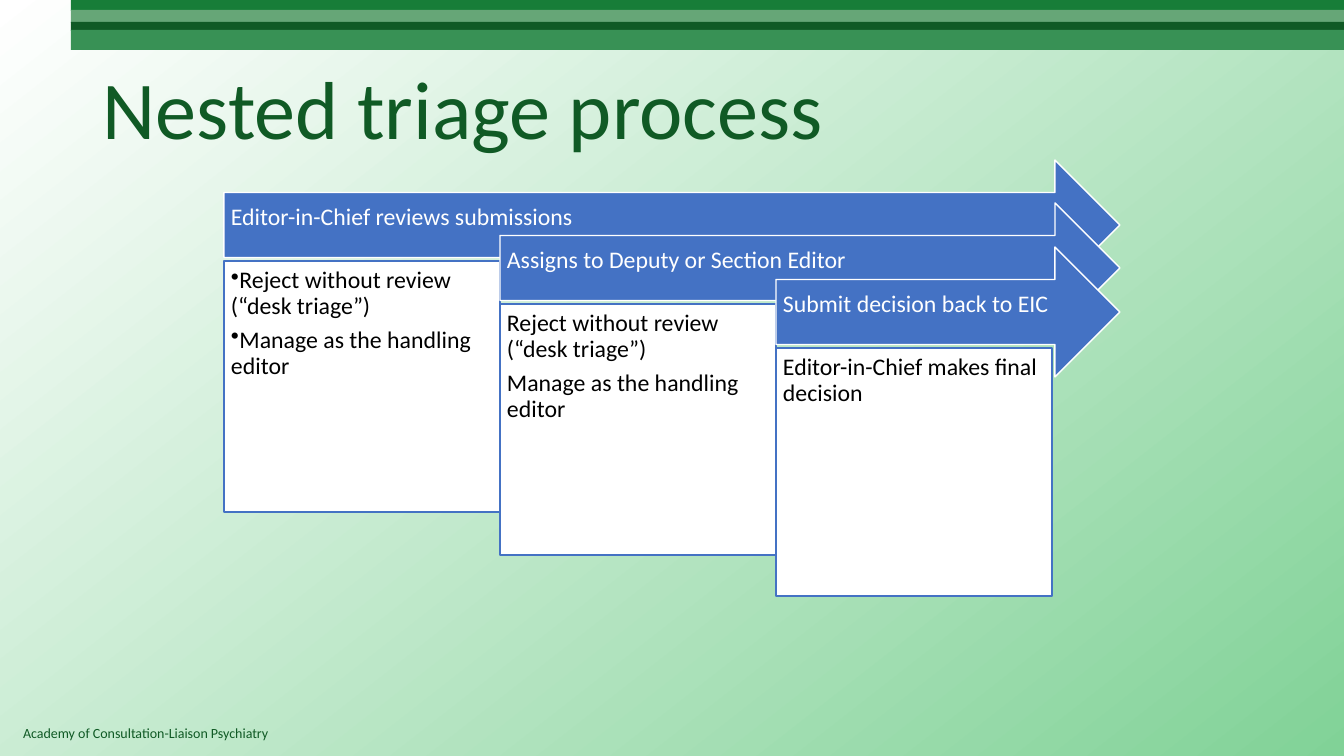
import pptx
import pptx.util
import pptx.dml.color
import pptx.enum.shapes
import pptx.enum.text
import lxml.etree

SCALE = 914400 / 100.8
HUES = {"white": "FFFFFF", "mint": "81D297", "leaf": "177D38", "sage": "66A677",
        "pine": "105A25", "fern": "389155", "blue": "4472C4", "black": "000000"}
KINDS = pptx.enum.shapes.MSO_SHAPE
ANCHOR = pptx.enum.text.MSO_ANCHOR
ALIGN = pptx.enum.text.PP_ALIGN


def add_block(kind, area, fill, line=None):
    block = slide.shapes.add_shape(kind, *[round(n * SCALE) for n in area])
    block.shadow.inherit = False
    block.fill.solid()
    block.fill.fore_color.rgb = pptx.dml.color.RGBColor.from_string(HUES[fill])
    if line:
        block.line.color.rgb = pptx.dml.color.RGBColor.from_string(HUES[line])
        block.line.width = pptx.util.Pt(1)
    else:
        block.line.fill.background()
    return block


def write(shape, lines, size, hue, anchor, pads, bullet=False):
    """Fill a shape with left-aligned lines; pads are left, top, right, bottom in px."""
    frame = shape.text_frame
    frame.text = "\n".join(lines)
    frame.word_wrap = True
    frame.auto_size = pptx.enum.text.MSO_AUTO_SIZE.NONE
    frame.vertical_anchor = anchor
    (frame.margin_left, frame.margin_top,
     frame.margin_right, frame.margin_bottom) = [round(n * SCALE) for n in pads]
    for par in frame.paragraphs:
        par.alignment = ALIGN.LEFT
        par.line_spacing = 0.9
        par.space_after = pptx.util.Pt(6)
        if bullet:
            mark = lxml.etree.SubElement(par._p.get_or_add_pPr(), pptx.oxml.ns.qn("a:buChar"))
            mark.set("char", "•")
        for run in par.runs:
            run.font.name = "Calibri"
            run.font.size = pptx.util.Pt(size)
            run.font.color.rgb = pptx.dml.color.RGBColor.from_string(HUES[hue])


deck = pptx.Presentation()
deck.slide_width = round(1344 * SCALE)
deck.slide_height = round(756 * SCALE)
slide = deck.slides.add_slide(deck.slide_layouts[5])

# Background and top bands
back = slide.background.fill
back.gradient()
back.gradient_angle = 308
for stop, hue in zip(back.gradient_stops, ("white", "mint")):
    stop.color.rgb = pptx.dml.color.RGBColor.from_string(HUES[hue])
for top, high, hue in ((0, 11, "leaf"), (10, 13, "sage"), (22, 9, "pine"), (30, 20, "fern")):
    add_block(KINDS.RECTANGLE, (71, top, 1273, high), hue)

# Title and footer
title = slide.shapes.title
title.left, title.top, title.width, title.height = [
    round(n * SCALE) for n in (93, 40, 1159, 146)]
write(title, ["Nested triage process"], 58.7, "pine", ANCHOR.MIDDLE, (10, 5, 10, 5))
foot = slide.shapes.add_textbox(*[round(n * SCALE) for n in (13, 721, 932, 27)])
write(foot, ["Academy of Consultation-Liaison Psychiatry"], 10, "pine",
      ANCHOR.TOP, (10, 5, 10, 5))

# Nested steps: each arrow starts further right and ends at the same edge
steps = [
    ("Editor-in-Chief reviews submissions",
     ["Reject without review (“desk triage”)", "Manage as the handling editor"], 251, True),
    ("Assigns to Deputy or Section Editor",
     ["Reject without review (“desk triage”)", "Manage as the handling editor"], 251, False),
    ("Submit decision back to EIC", ["Editor-in-Chief makes final decision"], 248, False),
]
for i, (head, notes, high, bullet) in enumerate(steps):
    left = 224 + 276 * i
    top = 160 + 87 * i // 2
    arrow = add_block(KINDS.RIGHT_ARROW, (left, top, 1120 - left, 130), "blue", "white")
    write(arrow, [head], 17, "white", ANCHOR.MIDDLE, (7, 7, 28, 21))
    box = add_block(KINDS.RECTANGLE, (left, top + 101, 276, high), "white", "blue")
    write(box, notes, 17, "black", ANCHOR.TOP, (7, 7, 7, 7), bullet)

deck.save("out.pptx")
